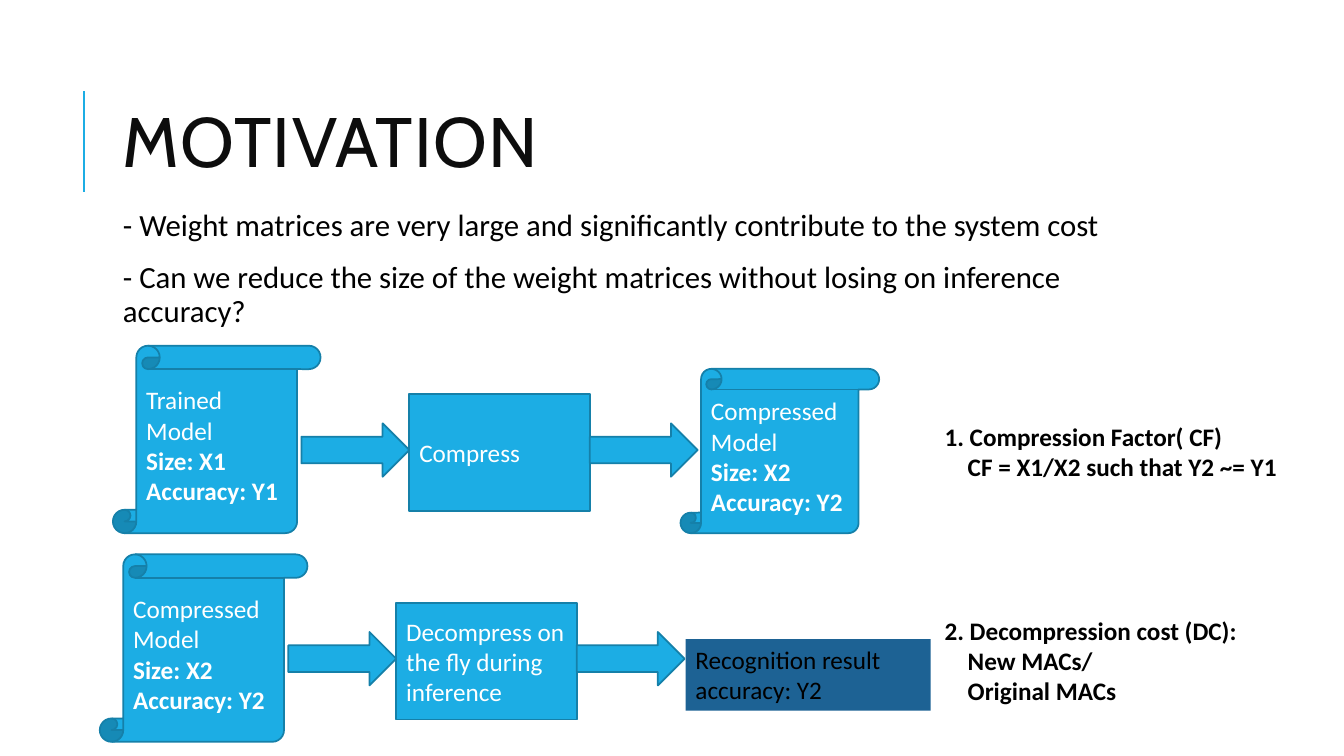
import dataclasses

import lxml.etree
import pptx
import pptx.dml.color
import pptx.enum.shapes
import pptx.enum.text
import pptx.oxml.ns
import pptx.util

SHAPES = pptx.enum.shapes.MSO_SHAPE
ANCHOR = pptx.enum.text.MSO_ANCHOR
EMU_PER_PX = 9144


@dataclasses.dataclass(frozen=True)
class Theme:
    accent: str = "1CADE4"
    outline: str = "1580A9"
    result: str = "1D6294"
    title: str = "0D0D0D"
    dark: str = "000000"
    light: str = "FFFFFF"
    title_font: str = "Cabin"
    body_font: str = "Calibri"
    title_size: int = 50
    body_size: int = 22
    label_size: int = 18
    rule_width: float = 1.5
    outline_width: float = 1.25


def px(length):
    return pptx.util.Emu(length * EMU_PER_PX)


def color(value):
    return pptx.dml.color.RGBColor.from_string(value)


class SlideBuilder:
    def __init__(self, slide, theme):
        self.slide = slide
        self.theme = theme

    def set_text(self, shape, lines, ink, size, font=None, bold_from=None, anchor=ANCHOR.TOP):
        text_frame = shape.text_frame
        text_frame.word_wrap = True
        text_frame.vertical_anchor = anchor
        text_frame.text = "\n".join(lines)
        for index, paragraph in enumerate(text_frame.paragraphs):
            paragraph.alignment = pptx.enum.text.PP_ALIGN.LEFT
            for run in paragraph.runs:
                run.font.name = font or self.theme.body_font
                run.font.size = pptx.util.Pt(size)
                run.font.color.rgb = color(ink)
                run.font.bold = bold_from is not None and index >= bold_from
        return text_frame

    def text_box(self, box, lines, ink, size, **style):
        shape = self.slide.shapes.add_textbox(*map(px, box))
        return self.set_text(shape, lines, ink, size, **style)

    def title(self, box, text):
        text_frame = self.text_box(box, [text], self.theme.title, self.theme.title_size,
                                   font=self.theme.title_font, anchor=ANCHOR.MIDDLE)
        paragraph = text_frame.paragraphs[0]
        paragraph.line_spacing = 0.8
        paragraph.runs[0].font._element.set("spc", "100")

    def body(self, box, lines):
        text_frame = self.text_box(box, lines, self.theme.dark, self.theme.body_size)
        text_frame.margin_left = px(15)
        text_frame.margin_right = text_frame.margin_top = text_frame.margin_bottom = px(5)
        for paragraph in text_frame.paragraphs:
            paragraph.line_spacing = 0.9
            paragraph.space_before = pptx.util.Pt(12)
            paragraph.space_after = pptx.util.Pt(2)

    def note(self, box, lines):
        text_frame = self.text_box(box, lines, self.theme.dark, self.theme.label_size, bold_from=0)
        for paragraph in text_frame.paragraphs[1:]:
            paragraph._p.get_or_add_pPr().set("marL", str(px(23)))

    def rule(self, start, end):
        connector = self.slide.shapes.add_connector(
            pptx.enum.shapes.MSO_CONNECTOR.STRAIGHT, *map(px, start + end))
        connector.line.color.rgb = color(self.theme.accent)
        connector.line.width = pptx.util.Pt(self.theme.rule_width)
        lxml.etree.SubElement(connector._element.spPr, pptx.oxml.ns.qn("a:effectLst"))

    def filled_shape(self, kind, box, fill):
        shape = self.slide.shapes.add_shape(kind, *map(px, box))
        shape.shadow.inherit = False
        shape.fill.solid()
        shape.fill.fore_color.rgb = color(fill)
        return shape

    def block(self, kind, box, lines=(), bold_from=None):
        shape = self.filled_shape(kind, box, self.theme.accent)
        shape.line.color.rgb = color(self.theme.outline)
        shape.line.width = pptx.util.Pt(self.theme.outline_width)
        if lines:
            self.set_text(shape, lines, self.theme.light, self.theme.label_size,
                          bold_from=bold_from, anchor=ANCHOR.MIDDLE)

    def model(self, box, name, size, accuracy):
        lines = [name, f"Size: {size}", f"Accuracy: {accuracy}"]
        self.block(SHAPES.VERTICAL_SCROLL, box, lines, bold_from=1)

    def stage(self, left, top, model, step):
        self.model((left, top, 206, 186), *model)
        self.block(SHAPES.RECTANGLE, (left + 294, top + 48, 179, 116), [step])
        for offset in (187, 473):
            self.block(SHAPES.RIGHT_ARROW, (left + offset, top + 77, 107, 53))

    def result(self, box, lines):
        shape = self.filled_shape(SHAPES.RECTANGLE, box, self.theme.result)
        shape.line.fill.background()
        self.set_text(shape, lines, self.theme.dark, self.theme.label_size)


def main():
    presentation = pptx.Presentation()
    presentation.slide_width = px(1333)
    presentation.slide_height = px(750)
    slide = presentation.slides.add_slide(presentation.slide_layouts[6])
    builder = SlideBuilder(slide, Theme())

    builder.rule((83, 190), (83, 90))
    builder.title((112, 64, 1063, 164), "MOTIVATION")
    builder.body((107, 203, 1063, 440), [
        "- Weight matrices are very large and significantly contribute to the system cost",
        "- Can we reduce the size of the weight matrices without losing on inference accuracy?",
    ])

    compressed = ("Compressed Model", "X2", "Y2")
    builder.stage(112, 343, ("Trained Model", "X1", "Y1"), "Compress")
    builder.model((675, 366, 197, 163), *compressed)
    builder.note((927, 413, 397, 71),
                 ["1. Compression Factor( CF)", "CF = X1/X2 such that Y2 ~= Y1"])

    builder.stage(99, 550, compressed, "Decompress on the fly during inference")
    builder.result((680, 634, 243, 71), ["Recognition result", "accuracy: Y2"])
    builder.note((927, 605, 330, 101),
                 ["2. Decompression cost (DC):", "New MACs/", "Original MACs"])

    presentation.save("out.pptx")


if __name__ == "__main__":
    main()
